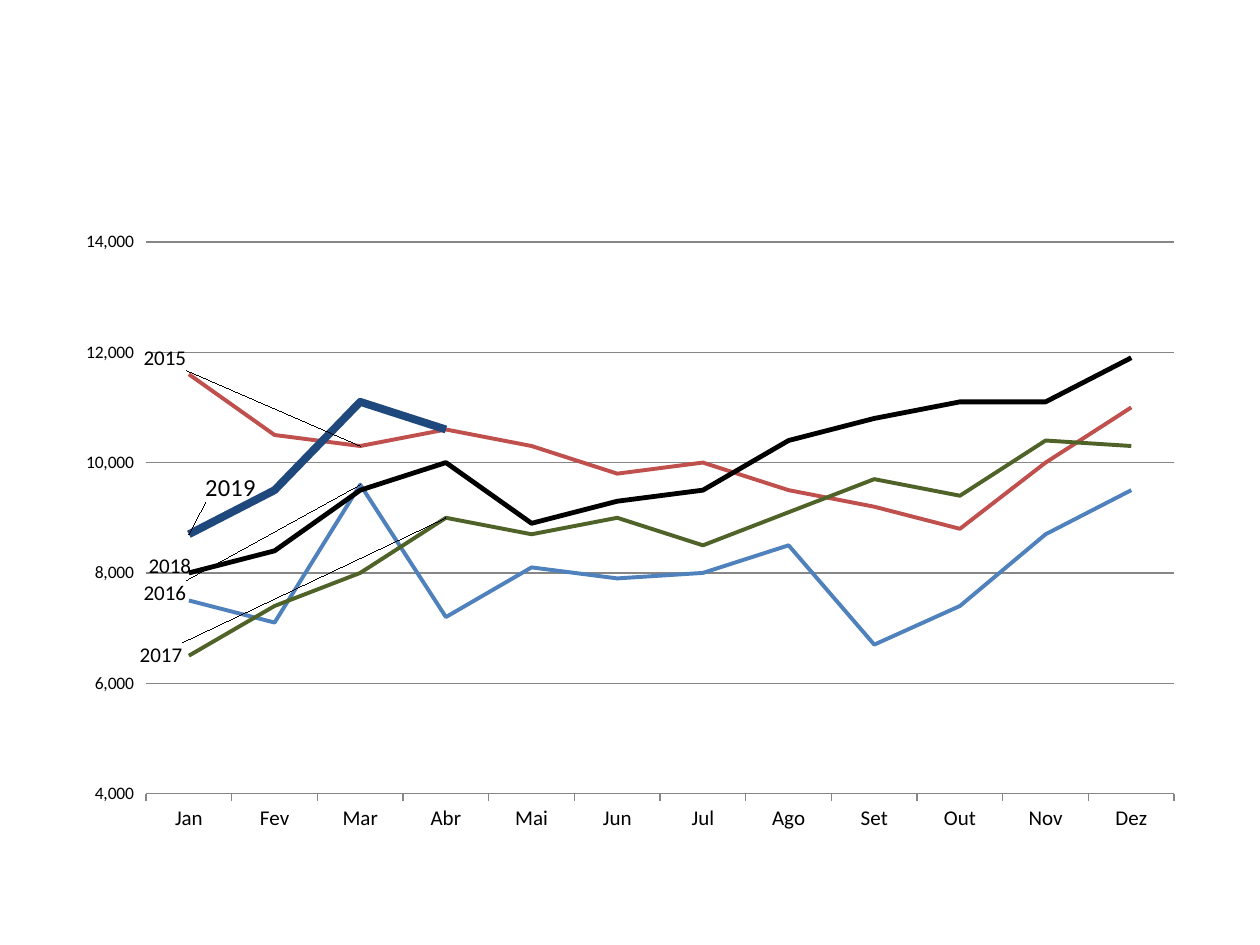
from lxml import etree
from pptx import Presentation
from pptx.chart.data import CategoryChartData
from pptx.dml.color import RGBColor
from pptx.enum.chart import XL_CHART_TYPE as ChartType, XL_MARKER_STYLE as Marker
from pptx.enum.chart import XL_TICK_MARK as Tick
from pptx.oxml import parse_xml
from pptx.oxml.ns import qn
from pptx.util import Inches, Pt

NS = 'xmlns:c="http://schemas.openxmlformats.org/drawingml/2006/chart"'
NS15 = 'xmlns:c15="http://schemas.microsoft.com/office/drawing/2012/chart"'
CHART_BOX = (0.5, 1.75, 9, 4.95)
PLOT_BOX = (0.66, 0.17, 8.16, 4.38)
MONTHS = ["Jan", "Fev", "Mar", "Abr", "Mai", "Jun",
          "Jul", "Ago", "Set", "Out", "Nov", "Dez"]
YEARS = [
    {"name": "2016", "color": "4F81BD", "width": 2.25, "point": 2, "shift": (-1.76, 0.86),
     "vals": [7500, 7100, 9600, 7200, 8100, 7900, 8000, 8500, 6700, 7400, 8700, 9500]},
    {"name": "2015", "color": "C0504D", "width": 2.25, "point": 2, "shift": (-1.76, -0.7),
     "vals": [11600, 10500, 10300, 10600, 10300, 9800, 10000, 9500, 9200, 8800, 10000, 11000]},
    {"name": "2017", "color": "4F6228", "width": 2.25, "point": 3, "shift": (-2.47, 1.09),
     "vals": [6500, 7400, 8000, 9000, 8700, 9000, 8500, 9100, 9700, 9400, 10400, 10300]},
    {"name": "2018", "color": "000000", "width": 2.75, "point": 0, "shift": (-0.36, -0.05),
     "vals": [8000, 8400, 9500, 10000, 8900, 9300, 9500, 10400, 10800, 11100, 11100, 11900]},
    {"name": "2019", "color": "1F497D", "width": 4.5, "point": 0, "shift": (0.09, -0.37),
     "size": 14, "leader": 0, "vals": [8700, 9500, 11100, 10600]},
]


def rgb(color):
    """Turn a hex string into a colour."""
    return RGBColor.from_string(color)


def assign(obj, values):
    """Set each attribute named in a dict."""
    for name, value in values.items():
        setattr(obj, name, value)


def layout_xml(**values):
    """Build a manual chart layout."""
    parts = "".join(f'<c:{k} val="{v}"/>' for k, v in values.items())
    return parse_xml(f"<c:layout {NS}><c:manualLayout>{parts}</c:manualLayout></c:layout>")


class Deck:
    """Hold the style and the current slide."""

    font = "Calibri"
    ink = "000000"
    grid = "868686"

    def __init__(self, prs):
        """Add a blank slide."""
        self.s = prs.slides.add_slide(prs.slide_layouts[6])

    def style(self, font, size):
        """Format a font in the deck style."""
        assign(font, {"name": self.font, "size": Pt(size), "bold": False})
        font.color.rgb = rgb(self.ink)

    def stroke(self, line, color, width):
        """Format a line."""
        line.color.rgb = rgb(color)
        line.width = Pt(width)

    def line_chart(self, box, plot_box, cats, rows):
        """Add a line chart with one labelled series per row."""
        data = CategoryChartData(number_format="#,##0")
        data.categories = cats
        for row in rows:
            data.add_series(row["name"], row["vals"] + [None] * (len(cats) - len(row["vals"])))
        chart = self.s.shapes.add_chart(ChartType.LINE, *map(Inches, box), data).chart
        assign(chart, {"has_legend": False, "has_title": False})
        self.style(chart.font, 10)
        self.axes(chart)
        width, height = box[2:]
        self.plot_area(chart, plot_box, width, height)
        for series, row in zip(chart.plots[0].series, rows):
            series.smooth = False
            series.marker.style = Marker.NONE
            self.stroke(series.format.line, row["color"], row["width"])
            self.year_label(series, row, width, height)

    def axes(self, chart):
        """Format both axes and the gridlines."""
        cat, val = chart.category_axis, chart.value_axis
        assign(val, {"minimum_scale": 4000, "maximum_scale": 14000, "major_unit": 2000,
                     "has_major_gridlines": True})
        assign(val.tick_labels, {"number_format": "#,##0", "number_format_is_linked": False})
        for axis, size in ((cat, 12), (val, 10)):
            axis.major_tick_mark = Tick.OUTSIDE
            self.style(axis.tick_labels.font, size)
        self.stroke(cat.format.line, self.grid, 0.75)
        self.stroke(val.major_gridlines.format.line, self.grid, 0.75)
        val.format.line.fill.background()

    def plot_area(self, chart, box, width, height):
        """Fix the inner plot area, given in inches within the chart."""
        area = chart.plots[0]._element.getparent()
        for old in area.findall(qn("c:layout")):
            area.remove(old)
        x, y, w, h = box
        area.insert(0, layout_xml(layoutTarget="inner", xMode="edge", yMode="edge",
                                  x=x / width, y=y / height, w=w / width, h=h / height))

    def year_label(self, series, row, width, height):
        """Name the series at one point, shifted by inches."""
        labels = series.data_labels
        labels.show_value = False
        label = series.points[row["point"]].data_label
        r = label.text_frame.paragraphs[0].add_run()
        r.text = row["name"]
        self.style(r.font, row.get("size", 12))
        x, y = row["shift"]
        root = labels._element
        root.find(qn("c:dLbl")).insert(1, layout_xml(x=x / width, y=y / height))
        ext = etree.SubElement(root, qn("c:extLst"))
        ext.append(parse_xml(
            f'<c:ext {NS} {NS15} uri="{{CE6537A1-D6FC-4f65-9D91-7224C49458BB}}">'
            f'<c15:showLeaderLines val="{row.get("leader", 1)}"/></c:ext>'))


def main():
    """Build the slide."""
    prs = Presentation()
    assign(prs, {"slide_width": Inches(10), "slide_height": Inches(7.5)})
    Deck(prs).line_chart(CHART_BOX, PLOT_BOX, MONTHS, YEARS)
    prs.save("out.pptx")


if __name__ == "__main__":
    main()
